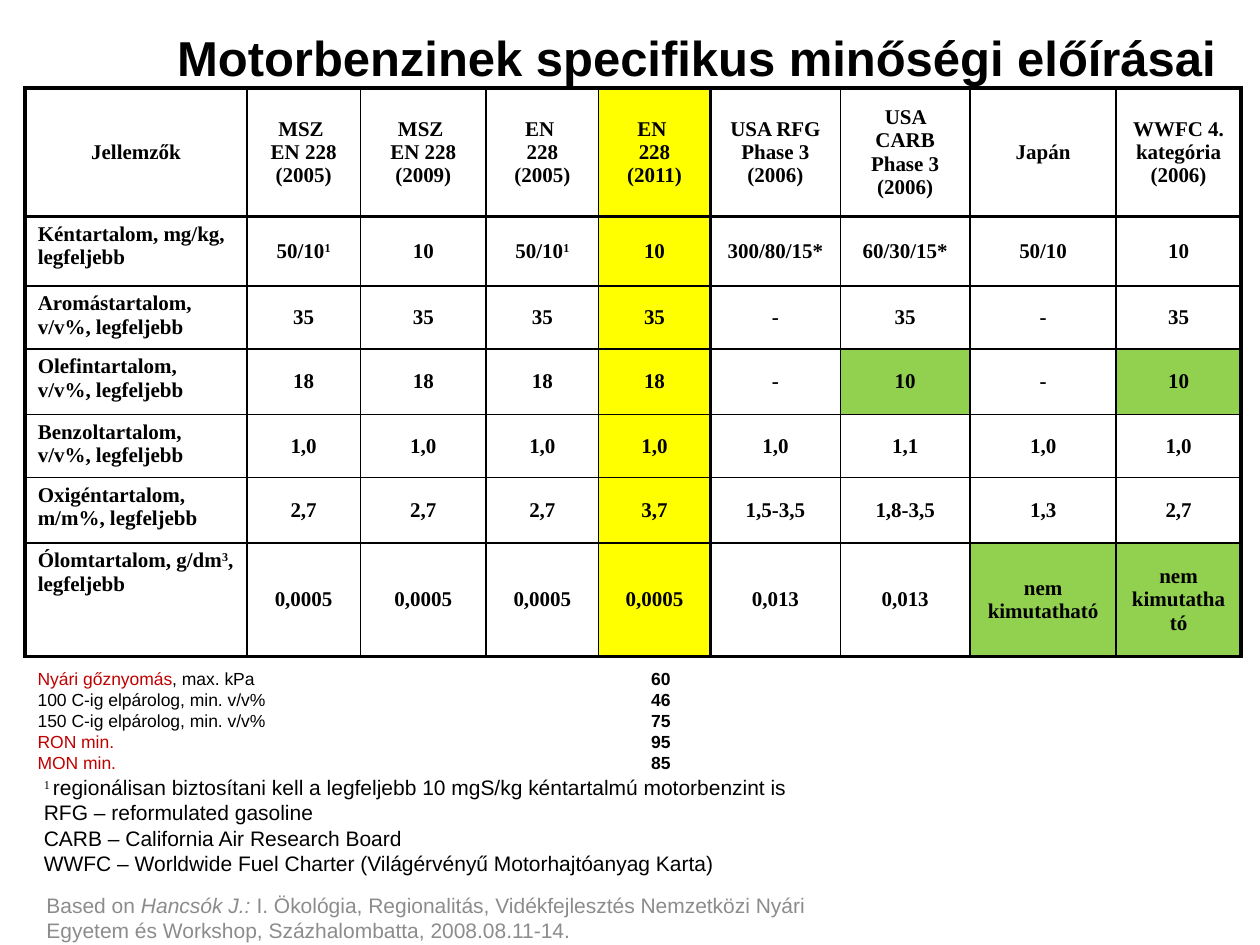
from lxml import etree
from pptx import Presentation
from pptx.dml.color import RGBColor
from pptx.enum.text import MSO_ANCHOR, PP_ALIGN
from pptx.oxml.ns import qn
from pptx.util import Inches, Pt

MIDDLE, TOP = MSO_ANCHOR.MIDDLE, MSO_ANCHOR.TOP
LEFT, CENTER, RIGHT = PP_ALIGN.LEFT, PP_ALIGN.CENTER, PP_ALIGN.RIGHT

BLACK = RGBColor(0x00, 0x00, 0x00)
GRAY = RGBColor(0x8C, 0x8C, 0x8C)
RED = RGBColor(0xC0, 0x00, 0x00)
YELLOW = RGBColor(0xFF, 0xFF, 0x00)
GREEN = RGBColor(0x92, 0xD0, 0x50)

SANS, SERIF = "Arial", "Times New Roman"
SLIDE_W, SLIDE_H = Inches(10), Inches(7.5)

COLUMN_SHARES = [17.6, 9, 10, 8.9, 8.9, 10.3, 10.3, 11.6, 9.9]
ROW_SHARES = [13.6, 7.33, 6.27, 6.93, 6.27, 6.93, 12]
VERTICAL_RULES = [2.25, 1.5, 1, 1.5, 1, 1.5, 1, 1.5, 1.5, 2.25]
HORIZONTAL_RULES = [2.25, 2, 1, 1, 1, 1, 1, 2.25]
EN_2011_COLUMN = 4
STRICTEST_CELLS = {(3, 6), (3, 8), (6, 7), (6, 8)}

SPECIFICATIONS = [
    ["Jellemzők", "MSZ \nEN 228\n(2005)", "MSZ \nEN 228\n(2009)",
     "EN \n228\n(2005)", "EN \n228\n(2011)", "USA RFG\nPhase 3\n(2006)",
     "USA CARB\nPhase 3\n(2006)", "Japán", "WWFC 4. kategória\n(2006)"],
    ["Kéntartalom, mg/kg, legfeljebb", "50/10^1", "10", "50/10^1", "10",
     "300/80/15*", "60/30/15*", "50/10", "10"],
    ["Aromástartalom, v/v%, legfeljebb",
     "35", "35", "35", "35", "-", "35", "-", "35"],
    ["Olefintartalom, v/v%, legfeljebb",
     "18", "18", "18", "18", "-", "10", "-", "10"],
    ["Benzoltartalom, v/v%, legfeljebb",
     "1,0", "1,0", "1,0", "1,0", "1,0", "1,1", "1,0", "1,0"],
    ["Oxigéntartalom, m/m%, legfeljebb",
     "2,7", "2,7", "2,7", "3,7", "1,5-3,5", "1,8-3,5", "1,3", "2,7"],
    ["Ólomtartalom, g/dm^3^, legfeljebb",
     "0,0005", "0,0005", "0,0005", "0,0005", "0,013", "0,013",
     "nem\nkimutatható", "nem\nkimutatható"],
]

VOLATILITY_AND_OCTANE = [
    ("Nyári gőznyomás", ", max. kPa", "60"),
    ("", "100 C-ig elpárolog, min. v/v%", "46"),
    ("", "150 C-ig elpárolog, min. v/v%", "75"),
    ("RON min.", "", "95"),
    ("MON min.", "", "85"),
]

ABBREVIATIONS = [
    "RFG – reformulated gasoline",
    "CARB – California Air Research Board",
    "WWFC – Worldwide Fuel Charter (Világérvényű Motorhajtóanyag Karta)",
]


def across(percent):
    return round(SLIDE_W * percent / 100)


def down(percent):
    return round(SLIDE_H * percent / 100)


def area(left, top, width, height):
    return across(left), down(top), across(width), down(height)


def add_run(paragraph, text, size, font=SANS, color=BLACK,
            bold=False, italic=False, raised=False):
    run = paragraph.add_run()
    run.text = text
    run.font.size = Pt(size)
    run.font.name = font
    run.font.color.rgb = color
    run.font.bold = bold
    run.font.italic = italic
    if raised:
        run._r.get_or_add_rPr().set("baseline", "30000")


def add_textbox(slide, box, anchor=TOP):
    frame = slide.shapes.add_textbox(*box).text_frame
    frame.word_wrap = True
    frame.vertical_anchor = anchor
    return frame


def paragraphs_for(frame, items):
    for index, item in enumerate(items):
        yield frame.paragraphs[0] if index == 0 else frame.add_paragraph(), item


def set_borders(cell, row, column):
    widths = {
        "a:lnL": VERTICAL_RULES[column],
        "a:lnR": VERTICAL_RULES[column + 1],
        "a:lnT": HORIZONTAL_RULES[row],
        "a:lnB": HORIZONTAL_RULES[row + 1],
    }
    properties = cell._tc.get_or_add_tcPr()
    for side, width in widths.items():
        line = etree.SubElement(properties, qn(side), w=str(Pt(width)))
        fill = etree.SubElement(line, qn("a:solidFill"))
        etree.SubElement(fill, qn("a:srgbClr"), val=str(BLACK))


def fill_cell(cell, row, column):
    if column == EN_2011_COLUMN or (row, column) in STRICTEST_CELLS:
        cell.fill.solid()
        cell.fill.fore_color.rgb = YELLOW if column == EN_2011_COLUMN else GREEN
    else:
        cell.fill.background()


def write_cell(cell, text, row, column):
    is_property = column == 0 and row > 0
    cell.vertical_anchor = TOP if is_property else MIDDLE
    for paragraph, line in paragraphs_for(cell.text_frame, text.split("\n")):
        paragraph.alignment = LEFT if is_property else CENTER
        for index, part in enumerate(line.split("^")):
            add_run(paragraph, part, 12, SERIF, bold=True, raised=index == 1)


def add_specification_table(slide):
    box = area(2, 9.33, sum(COLUMN_SHARES), sum(ROW_SHARES))
    table = slide.shapes.add_table(
        len(ROW_SHARES), len(COLUMN_SHARES), *box).table
    table.first_row = table.horz_banding = False
    for column, share in zip(table.columns, COLUMN_SHARES):
        column.width = across(share)
    for row, share in zip(table.rows, ROW_SHARES):
        row.height = down(share)
    for row, texts in enumerate(SPECIFICATIONS):
        for column, text in enumerate(texts):
            cell = table.cell(row, column)
            set_borders(cell, row, column)
            fill_cell(cell, row, column)
            write_cell(cell, text, row, column)


def add_title(slide):
    title = slide.shapes.title
    title.left, title.top, title.width, title.height = area(7.5, 1.07, 90, 10)
    title.text_frame.vertical_anchor = MIDDLE
    paragraph = title.text_frame.paragraphs[0]
    paragraph.alignment = RIGHT
    add_run(paragraph, "Motorbenzinek specifikus minőségi előírásai", 28, bold=True)


def add_limits(slide):
    frame = add_textbox(slide, area(2, 70, 96.1, 17.07))
    for paragraph, (highlight, label, limit) in paragraphs_for(
            frame, VOLATILITY_AND_OCTANE):
        tabs = etree.SubElement(paragraph._p.get_or_add_pPr(), qn("a:tabLst"))
        etree.SubElement(tabs, qn("a:tab"), pos=str(across(48.7)), algn="l")
        if highlight:
            add_run(paragraph, highlight, 10, color=RED)
        add_run(paragraph, label + "\t", 10)
        add_run(paragraph, limit, 10, bold=True)


def add_footnotes(slide):
    frame = add_textbox(slide, area(2.5, 81.33, 96.7, 14.8))
    footnote = frame.paragraphs[0]
    add_run(footnote, "1 ", 12, SERIF, raised=True)
    add_run(footnote, "regionálisan biztosítani kell a legfeljebb 10 mgS/kg "
            "kéntartalmú motorbenzint is", 12)
    for abbreviation in ABBREVIATIONS:
        add_run(frame.add_paragraph(), abbreviation, 12)


def add_citation(slide):
    frame = add_textbox(slide, area(2.7, 93.73, 62.9, 6.67), MIDDLE)
    citation = frame.paragraphs[0]
    add_run(citation, "Based on ", 12, color=GRAY)
    add_run(citation, "Hancsók J.: ", 12, color=GRAY, italic=True)
    add_run(citation, "I. Ökológia, Regionalitás, Vidékfejlesztés Nemzetközi Nyári "
            "Egyetem és Workshop, Százhalombatta, 2008.08.11-14.", 12, color=GRAY)


def main():
    presentation = Presentation()
    presentation.slide_width, presentation.slide_height = SLIDE_W, SLIDE_H
    slide = presentation.slides.add_slide(presentation.slide_layouts[5])
    add_citation(slide)
    add_title(slide)
    add_specification_table(slide)
    add_footnotes(slide)
    add_limits(slide)
    presentation.save("out.pptx")


if __name__ == "__main__":
    main()
